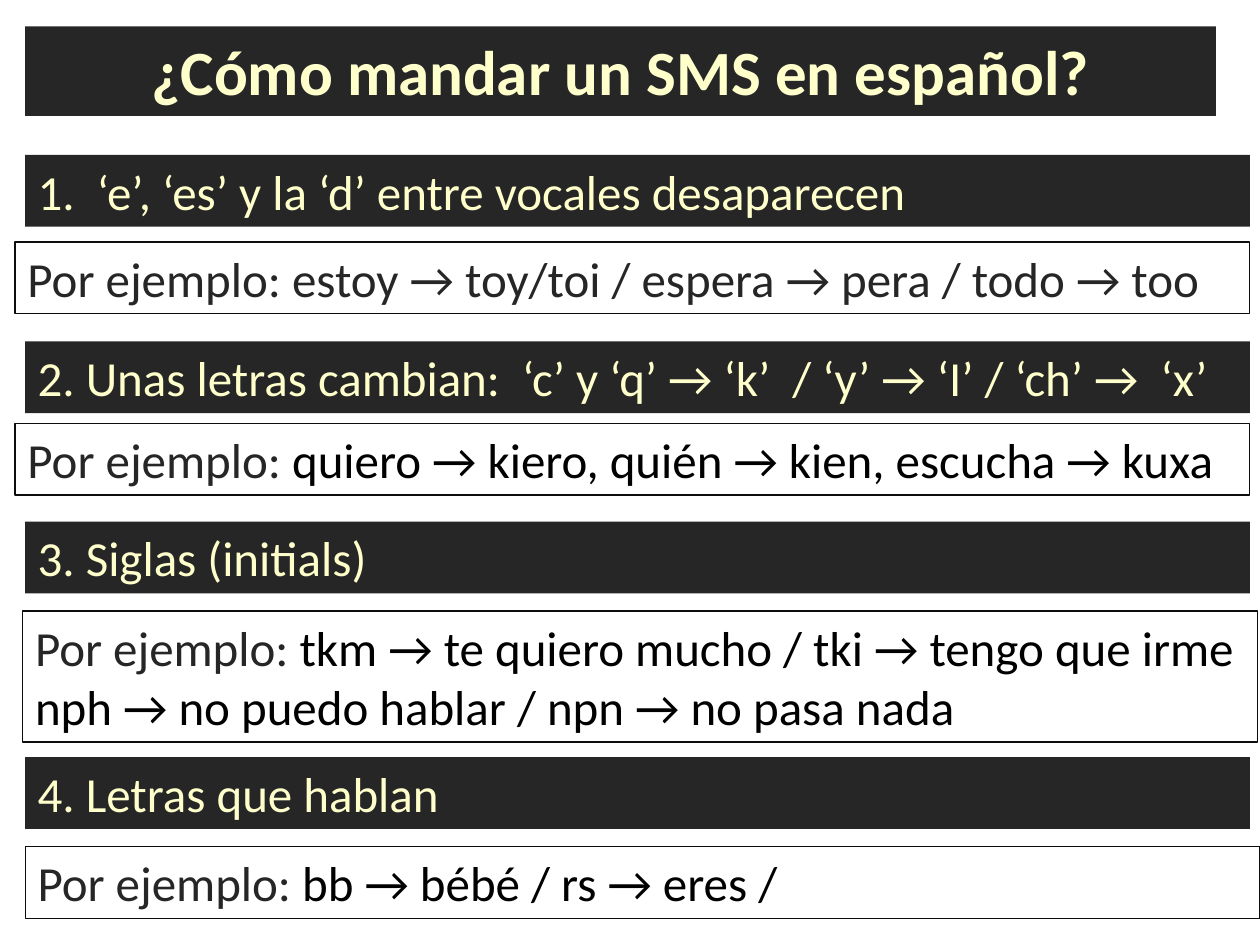
"""Build a slide on how to write text messages in Spanish."""
from pptx import Presentation
from pptx.dml.color import RGBColor
from pptx.enum.text import MSO_AUTO_SIZE, PP_ALIGN
from pptx.util import Inches, Pt

FIT_SHAPE = MSO_AUTO_SIZE.SHAPE_TO_FIT_TEXT
LEFT, CENTER = PP_ALIGN.LEFT, PP_ALIGN.CENTER
DARK, CREAM, BLACK, BORDER = "262626", "FFFFCC", "000000", "0D0D0D"
MARGIN, RULE_WIDTH, EXAMPLE_WIDTH = 0.2, 9.72, 9.8
LINE_HEIGHT, PADDING = 0.47, 0.1

TITLE = "¿Cómo mandar un SMS en español?"
EXAMPLE_LABEL = "Por ejemplo: "
RULES = [
    {"rule": "1.  ‘e’, ‘es’ y la ‘d’ entre vocales desaparecen", "top": 1.23,
     "example": "estoy → toy/toi / espera → pera / todo → too",
     "example_at": (0.12, 1.92), "color": DARK},
    {"rule": "2. Unas letras cambian:  ‘c’ y ‘q’ → ‘k’  / ‘y’ → ‘I’ / ‘ch’ →  ‘x’", "top": 2.71,
     "example": "quiero → kiero, quién → kien, escucha → kuxa",
     "example_at": (0.12, 3.36), "color": BLACK},
    {"rule": "3. Siglas (initials)", "top": 4.14,
     "example": "tkm → te quiero mucho / tki → tengo que irme\n"
                "nph → no puedo hablar / npn → no pasa nada",
     "example_at": (0.18, 4.85), "color": BLACK},
    {"rule": "4. Letras que hablan", "top": 6.01,
     "example": "bb → bébé / rs → eres /",
     "example_at": (0.2, 6.72), "color": BLACK},
]


def rgb(value):
    return RGBColor.from_string(value)


def add_box(slide, left, top, width, height, runs, size=28, bold=False, align=LEFT, fill=None):
    box = slide.shapes.add_textbox(Inches(left), Inches(top), Inches(width), Inches(height))
    if fill:
        box.fill.solid()
        box.fill.fore_color.rgb = rgb(fill)
    else:
        box.line.color.rgb = rgb(BORDER)
        box.line.width = Pt(0.75)
    frame = box.text_frame
    frame.word_wrap = True
    frame.auto_size = FIT_SHAPE
    paragraph = frame.paragraphs[0]
    paragraph.alignment = align
    font_format = {"name": "Calibri", "size": Pt(size), "bold": bold}
    for text, color in runs:
        for index, line in enumerate(text.split("\n")):
            if index:
                paragraph.add_line_break()
            run = paragraph.add_run()
            run.text = line
            for name, value in font_format.items():
                setattr(run.font, name, value)
            run.font.color.rgb = rgb(color)


def main():
    presentation = Presentation()
    presentation.slide_width, presentation.slide_height = Inches(10), Inches(7.5)
    slide = presentation.slides.add_slide(presentation.slide_layouts[6])
    add_box(slide, MARGIN, 0.21, 9.45, 0.71, [(TITLE, CREAM)],
            size=36, bold=True, align=CENTER, fill=DARK)
    for item in RULES:
        add_box(slide, MARGIN, item["top"], RULE_WIDTH, LINE_HEIGHT + PADDING,
                [(item["rule"], CREAM)], fill=DARK)
        line_count = item["example"].count("\n") + 1
        add_box(slide, *item["example_at"], EXAMPLE_WIDTH, LINE_HEIGHT * line_count + PADDING,
                [(EXAMPLE_LABEL, DARK), (item["example"], item["color"])])
    presentation.save("out.pptx")


if __name__ == "__main__":
    main()
